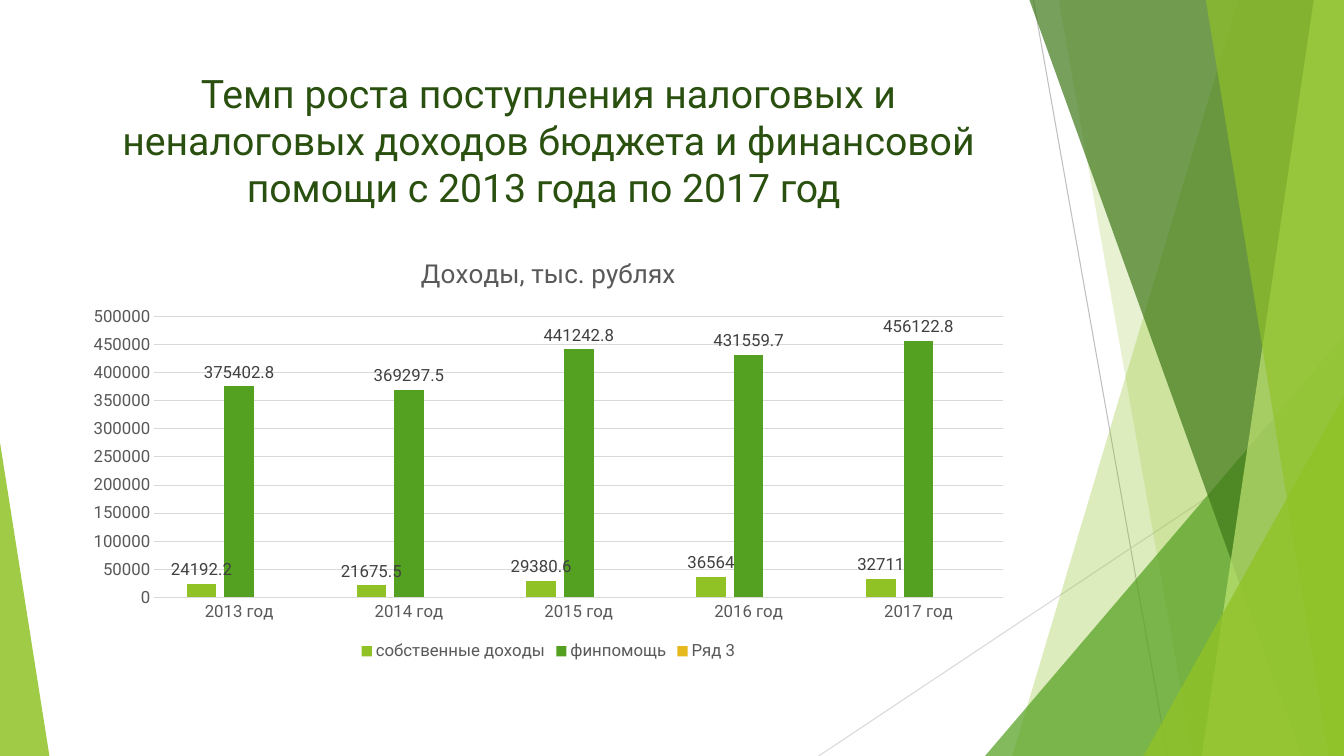
from pptx import Presentation
from pptx.chart.data import CategoryChartData
from pptx.dml.color import RGBColor
from pptx.enum.chart import (XL_CHART_TYPE as ChartType, XL_LABEL_POSITION as LabelPos,
                             XL_LEGEND_POSITION as LegendPos, XL_TICK_MARK as Tick)
from pptx.enum.shapes import MSO_CONNECTOR as Connector, MSO_SHAPE as Shape
from pptx.enum.text import MSO_ANCHOR as Anchor, PP_ALIGN as Align
from pptx.oxml.ns import qn
from pptx.util import Inches, Pt
from lxml import etree

FONT = "Roboto"
LIME = RGBColor(0x90, 0xC2, 0x26)
GREEN = RGBColor(0x54, 0xA0, 0x21)
FOREST = RGBColor(0x3F, 0x78, 0x19)
PALE = RGBColor(0xC0, 0xE4, 0x74)
GOLD = RGBColor(0xE6, 0xB9, 0x1E)
TITLE = RGBColor(0x2A, 0x50, 0x10)
TEXT = RGBColor(0x59, 0x59, 0x59)
LABEL = RGBColor(0x40, 0x40, 0x40)
RULE = RGBColor(0xD9, 0xD9, 0xD9)
GREY = RGBColor(0xBF, 0xBF, 0xBF)

W, H = 13.33, 7.5
LEFT, WIDTH = 0.74, 9.4

YEARS = [f"{year} год" for year in range(2013, 2018)]
SERIES = [
    ("собственные доходы", LIME, [24192.2, 21675.5, 29380.6, 36564, 32711]),
    ("финпомощь", GREEN, [375402.8, 369297.5, 441242.8, 431559.7, 456122.8]),
    ("Ряд 3", GOLD, [None] * len(YEARS)),
]


def style_font(font, size, color):
    font.name, font.size, font.bold = FONT, Pt(size), False
    font.color.rgb = color


def style_line(line, color):
    line.color.rgb = color
    line.width = Pt(0.75)


def paint(shape, color, opacity):
    """Fill with a translucent colour, without outline or shadow."""
    shape.shadow.inherit = False
    shape.line.fill.background()
    shape.fill.solid()
    shape.fill.fore_color.rgb = color
    clr = shape.fill._xPr.find(qn("a:solidFill"))[0]
    etree.SubElement(clr, qn("a:alpha")).set("val", str(opacity * 1000))


def add_line(s, x1, y1, x2, y2, color):
    line = s.shapes.add_connector(Connector.STRAIGHT, Inches(x1), Inches(y1),
                                  Inches(x2), Inches(y2))
    style_line(line.line, color)
    etree.SubElement(line._element.spPr, qn("a:effectLst"))


def add_band(s, top_x, bottom_x, color, opacity):
    """Band from a slanted left edge to the right side of the slide."""
    points = [(top_x, 0), (W, 0), (W, H), (bottom_x, H)]
    corners = [(Inches(x), Inches(y)) for x, y in points]
    builder = s.shapes.build_freeform(*corners[0])
    builder.add_line_segments(corners[1:], close=True)
    paint(builder.convert_to_shape(), color, opacity)


def add_triangle(s, left, top, width, apex, color, opacity):
    """Triangle standing on the bottom edge of the slide."""
    sp = s.shapes.add_shape(Shape.ISOSCELES_TRIANGLE, Inches(left), Inches(top),
                            Inches(width), Inches(H - top))
    sp.adjustments[0] = apex
    paint(sp, color, opacity)


def add_decoration(s):
    add_line(s, 10.25, 0, 11.58, H, GREY)
    add_line(s, W, 4.03, 8.12, H, RULE)
    add_band(s, 12.28, 10.04, LIME, 30)
    add_band(s, 10.5, 11.83, LIME, 20)
    add_triangle(s, 9.77, 3.33, 3.56, 1, GREEN, 72)
    add_band(s, 10.21, 12.91, FOREST, 70)
    add_band(s, 13.03, 11.92, PALE, 70)
    add_band(s, 11.96, 13.18, LIME, 65)
    add_triangle(s, 11.34, 3.93, 1.99, 1, LIME, 80)
    add_triangle(s, 0, 4.39, 0.49, 0, LIME, 85)


def set_title(s, text):
    title = s.shapes.title
    title.left, title.top = Inches(LEFT), Inches(0.67)
    title.width, title.height = Inches(WIDTH), Inches(1.44)
    tf = title.text_frame
    tf.text = text
    tf.word_wrap = True
    tf.vertical_anchor = Anchor.MIDDLE
    p = tf.paragraphs[0]
    p.alignment = Align.CENTER
    style_font(p.runs[0].font, 28, TITLE)


def style_axes(chart):
    for axis in (chart.category_axis, chart.value_axis):
        axis.major_tick_mark = axis.minor_tick_mark = Tick.NONE
        style_font(axis.tick_labels.font, 12, TEXT)
    style_line(chart.category_axis.format.line, RULE)
    values = chart.value_axis
    values.minimum_scale, values.maximum_scale, values.major_unit = 0, 500000, 50000
    values.format.line.fill.background()
    style_line(values.major_gridlines.format.line, RULE)


def style_series(series, color):
    series.format.fill.solid()
    series.format.fill.fore_color.rgb = color
    series.invert_if_negative = False
    if any(value is not None for value in series.values):
        labels = series.data_labels
        labels.show_value = True
        labels.position = LabelPos.OUTSIDE_END
        style_font(labels.font, 12, LABEL)


def add_income_chart(s):
    data = CategoryChartData()
    data.categories = YEARS
    for name, _, values in SERIES:
        data.add_series(name, values)
    chart = s.shapes.add_chart(ChartType.COLUMN_CLUSTERED, Inches(LEFT), Inches(2.36),
                               Inches(WIDTH), Inches(4.24), data).chart
    chart.font.name, chart.font.size = FONT, Pt(10)

    # Chart title and legend
    tf = chart.chart_title.text_frame
    tf.text = "Доходы, тыс. рублях"
    style_font(tf.paragraphs[0].runs[0].font, 18.6, TEXT)
    chart.has_legend = True
    chart.legend.position = LegendPos.BOTTOM
    chart.legend.include_in_layout = False
    style_font(chart.legend.font, 12, TEXT)

    # Axes and columns
    style_axes(chart)
    plot = chart.plots[0]
    plot.gap_width, plot.overlap = 219, -27
    plot.vary_by_categories = False
    for series, (_, color, _) in zip(plot.series, SERIES):
        style_series(series, color)


def main():
    prs = Presentation()
    prs.slide_width, prs.slide_height = Inches(W), Inches(H)
    s = prs.slides.add_slide(prs.slide_layouts[5])
    add_decoration(s)
    set_title(s, "Темп роста поступления налоговых и неналоговых доходов бюджета "
                 "и финансовой помощи с 2013 года по 2017 год ")
    add_income_chart(s)
    prs.save("out.pptx")


if __name__ == "__main__":
    main()
